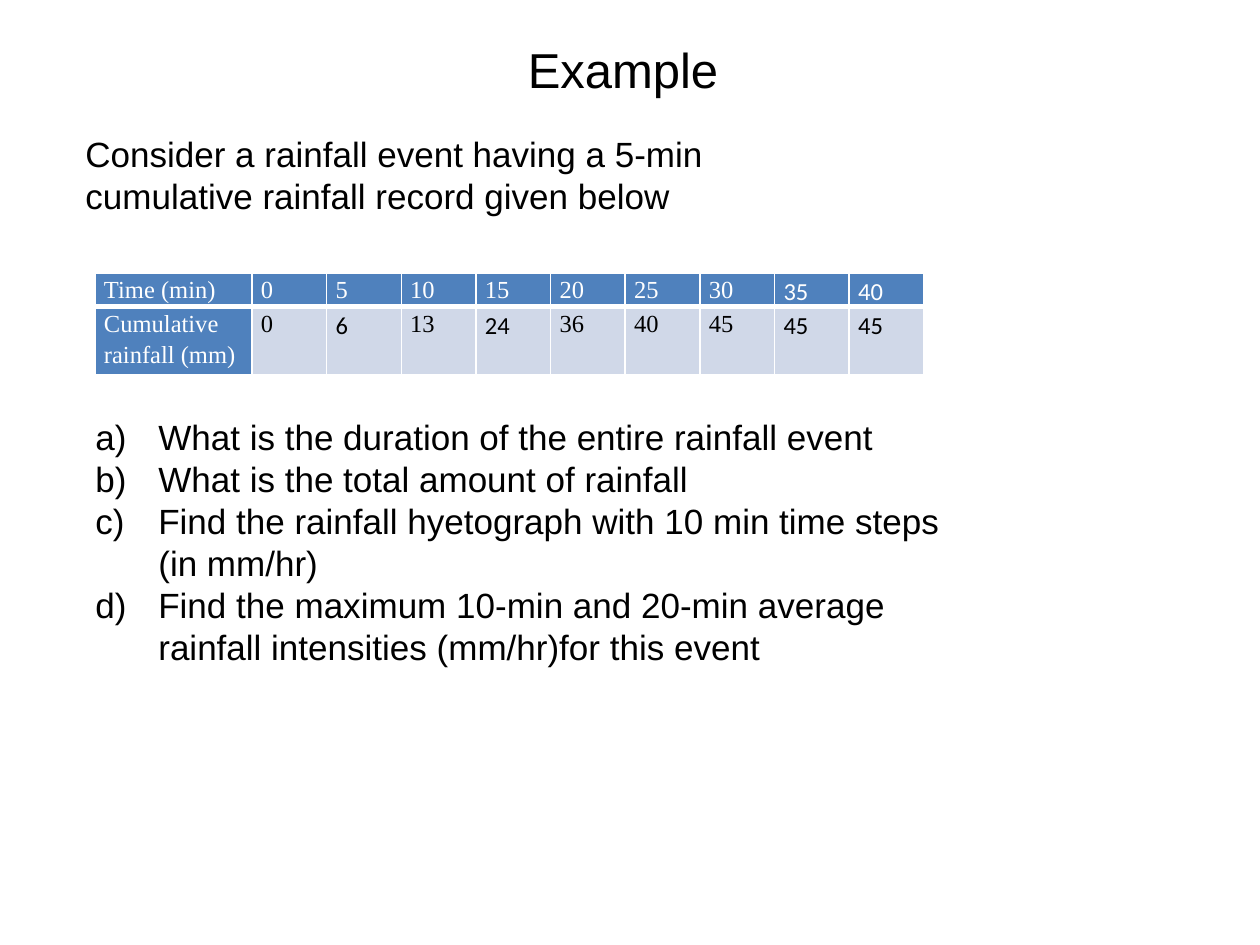
from dataclasses import dataclass

from lxml import etree
from pptx import Presentation
from pptx.dml.color import RGBColor
from pptx.enum.text import MSO_ANCHOR, MSO_AUTO_SIZE, PP_ALIGN
from pptx.oxml.ns import qn
from pptx.util import Emu, Pt

CENTER, LEFT = PP_ALIGN.CENTER, PP_ALIGN.LEFT
TOP, GROW = MSO_ANCHOR.TOP, MSO_AUTO_SIZE.SHAPE_TO_FIT_TEXT
TITLE_ONLY = 5


@dataclass(frozen=True)
class Theme:
    black: str = "000000"
    white: str = "FFFFFF"
    blue: str = "4F81BD"
    pale: str = "D0D8E8"
    sans: str = "Arial"
    serif: str = "Times New Roman"
    plain: str = "Calibri"
    head: int = 28
    body: int = 20
    cell: int = 14


@dataclass(frozen=True)
class Box:
    left: int
    top: int
    width: int
    height: int


@dataclass(frozen=True)
class Row:
    height: int
    label: str
    values: tuple[int, ...]
    plain: tuple[int, ...]  # value columns set in the plain face
    fill: str
    ink: str
    base: int  # width of the bottom border in points


THEME = Theme()
TITLE = Box(179, 33, 888, 72)
INTRO = Box(73, 126, 809, 97)
GRID = Box(95, 273, 829, 101)
TASKS = Box(83, 409, 883, 267)
LABEL_WIDTH = 157
CELL_PAD = 9
INDENT = 63

ROWS = (
    Row(33, "Time (min)", (0, 5, 10, 15, 20, 25, 30, 35, 40), (7, 8),
        THEME.blue, THEME.white, 3),
    Row(68, "Cumulative rainfall (mm)", (0, 6, 13, 24, 36, 40, 45, 45, 45),
        (1, 3, 7, 8), THEME.pale, THEME.black, 1),
)
QUESTIONS = (
    "What is the duration of the entire rainfall event",
    "What is the total amount of rainfall",
    "Find the rainfall hyetograph with 10 min time steps (in mm/hr)",
    "Find the maximum 10-min and 20-min average rainfall intensities "
    "(mm/hr)for this event",
)


def px(count: float) -> Emu:
    return Emu(round(count * 914400 / 126))


def place(box: Box) -> tuple[Emu, ...]:
    return px(box.left), px(box.top), px(box.width), px(box.height)


def apply(target, values: dict) -> None:
    for name, value in values.items():
        setattr(target, name, value)


def write(para, text: str, face: str, size: int, ink: str) -> None:
    run = para.add_run()
    run.text = text
    apply(run.font, {"name": face, "size": Pt(size), "bold": False})
    run.font.color.rgb = RGBColor.from_string(ink)


def add_title(slide, text: str) -> None:
    title = slide.shapes.title
    apply(title, dict(zip(("left", "top", "width", "height"), place(TITLE))))
    frame = title.text_frame
    apply(frame, {"word_wrap": True, "auto_size": GROW,
                  "vertical_anchor": TOP})
    para = frame.paragraphs[0]
    para.alignment = CENTER
    write(para, text, THEME.sans, THEME.head, THEME.black)


def letter(para) -> None:
    """Number the paragraph a), b), c) with a hanging indent."""
    props = para._p.get_or_add_pPr()
    props.set("marL", str(px(INDENT)))
    props.set("indent", str(-px(INDENT)))
    etree.SubElement(props, qn("a:buAutoNum"), type="alphaLcParenR")


def add_text(slide, box: Box, lines: tuple[str, ...],
             listed: bool = False) -> None:
    frame = slide.shapes.add_textbox(*place(box)).text_frame
    apply(frame, {"word_wrap": True, "auto_size": GROW})
    for i, line in enumerate(lines):
        para = frame.add_paragraph() if i else frame.paragraphs[0]
        para.alignment = LEFT
        if listed:
            letter(para)
        write(para, line, THEME.sans, THEME.body, THEME.black)


def edge(cell, base: int) -> None:
    """Draw white borders, the bottom one base points wide."""
    props = cell._tc.get_or_add_tcPr()
    for side, width in {"L": 1, "R": 1, "T": 1, "B": base}.items():
        line = etree.SubElement(props, qn(f"a:ln{side}"), w=str(Pt(width)))
        fill = etree.SubElement(line, qn("a:solidFill"))
        etree.SubElement(fill, qn("a:srgbClr"), val=THEME.white)


def fill_cell(cell, text: str, face: str, ink: str, fill: str,
              base: int) -> None:
    apply(cell, {"margin_left": px(CELL_PAD), "margin_right": px(CELL_PAD),
                 "margin_top": 0, "margin_bottom": 0,
                 "vertical_anchor": TOP})
    edge(cell, base)
    cell.fill.solid()
    cell.fill.fore_color.rgb = RGBColor.from_string(fill)
    para = cell.text_frame.paragraphs[0]
    para.line_spacing = 1.15
    write(para, text, face, THEME.cell, ink)


def add_grid(slide, rows: tuple[Row, ...]) -> None:
    count = len(rows[0].values)
    table = slide.shapes.add_table(len(rows), count + 1, *place(GRID)).table
    step = (GRID.width - LABEL_WIDTH) / count
    for i, col in enumerate(table.columns):
        col.width = px(step if i else LABEL_WIDTH)
    for r, row in enumerate(rows):
        table.rows[r].height = px(row.height)
        fill_cell(table.cell(r, 0), row.label, THEME.serif, THEME.white,
                  THEME.blue, row.base)
        for c, value in enumerate(row.values):
            face = THEME.plain if c in row.plain else THEME.serif
            fill_cell(table.cell(r, c + 1), str(value), face, row.ink,
                      row.fill, row.base)


def main() -> None:
    deck = Presentation()
    apply(deck, {"slide_width": px(1260), "slide_height": px(945)})
    slide = deck.slides.add_slide(deck.slide_layouts[TITLE_ONLY])
    add_title(slide, "Example")
    add_text(slide, INTRO, ("Consider a rainfall event having a 5-min "
                            "cumulative rainfall record given below",))
    add_grid(slide, ROWS)
    add_text(slide, TASKS, QUESTIONS, listed=True)
    deck.save("out.pptx")


if __name__ == "__main__":
    main()
